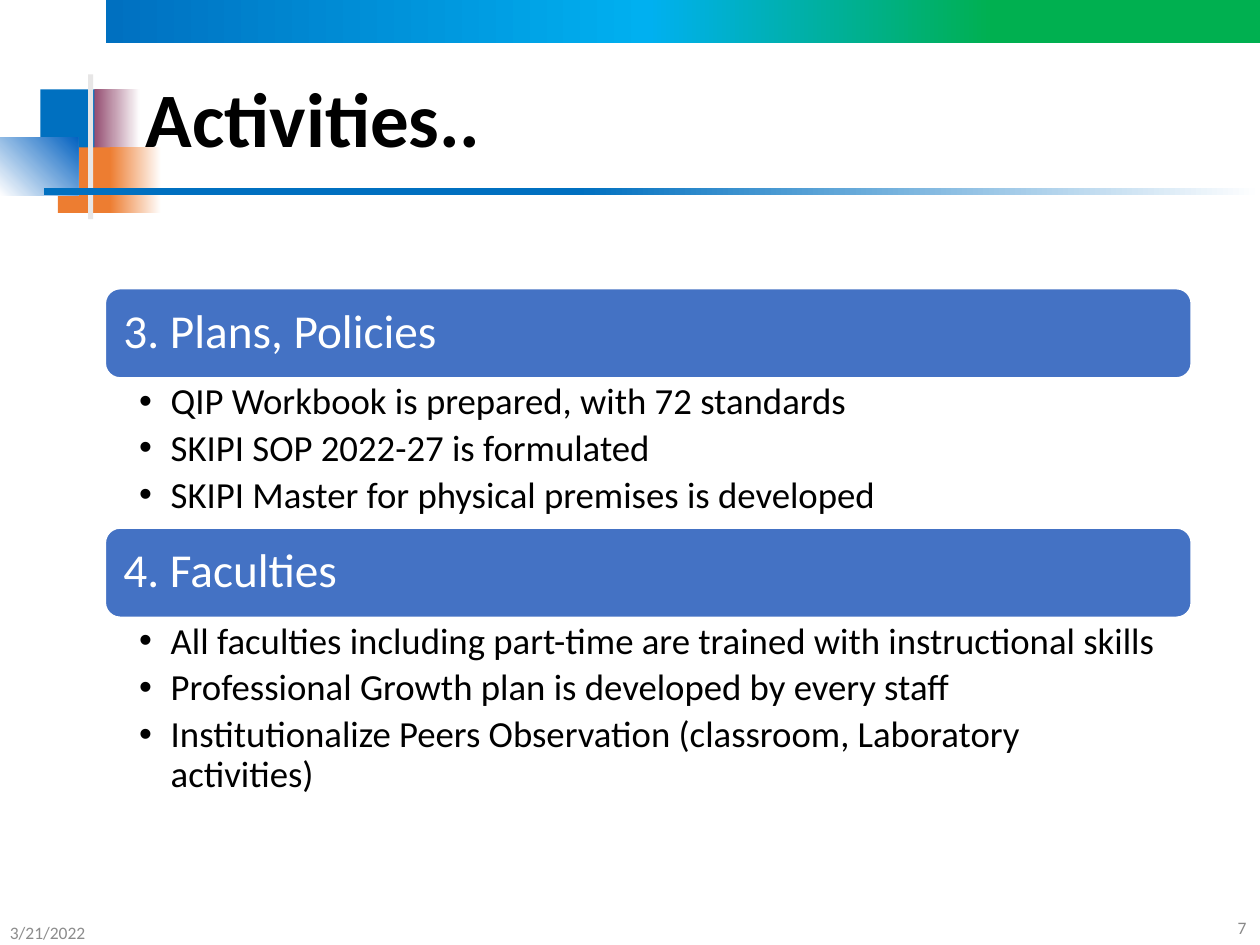
from lxml import etree
from pptx import Presentation
from pptx.dml.color import RGBColor
from pptx.enum.shapes import MSO_SHAPE
from pptx.enum.text import MSO_ANCHOR, PP_ALIGN
from pptx.oxml import parse_xml
from pptx.oxml.ns import nsdecls, qn
from pptx.util import Inches, Pt

RECTANGLE = MSO_SHAPE.RECTANGLE
ROUNDED = MSO_SHAPE.ROUNDED_RECTANGLE
MIDDLE, TOP = MSO_ANCHOR.MIDDLE, MSO_ANCHOR.TOP
LEFT, RIGHT = PP_ALIGN.LEFT, PP_ALIGN.RIGHT

BLACK = RGBColor(0x00, 0x00, 0x00)
WHITE = RGBColor(0xFF, 0xFF, 0xFF)
BLUE = RGBColor(0x00, 0x70, 0xC0)
SKY = RGBColor(0x00, 0xB0, 0xF0)
GREEN = RGBColor(0x00, 0xB0, 0x50)
PLUM = RGBColor(0x95, 0x4F, 0x72)
ORANGE = RGBColor(0xED, 0x7D, 0x31)
LINK_BLUE = RGBColor(0x05, 0x63, 0xC1)
PALE = RGBColor(0xE7, 0xE6, 0xE6)
HEADING_BLUE = RGBColor(0x44, 0x72, 0xC4)
DATE_GRAY = RGBColor(0x8C, 0x8C, 0x8C)
NUMBER_GRAY = RGBColor(0x89, 0x89, 0x89)

presentation = Presentation()
presentation.slide_width = Inches(10)
presentation.slide_height = Inches(7.5)
slide = presentation.slides.add_slide(presentation.slide_layouts[6])
COLUMN = presentation.slide_width / 100
ROW = presentation.slide_height / 75


def add_block(left, top, width, height, stops, angle=0, kind=RECTANGLE):
    shape = slide.shapes.add_shape(
        kind, int(left * COLUMN), int(top * ROW), int(width * COLUMN), int(height * ROW))
    shape.shadow.inherit = False
    shape.line.fill.background()
    if len(stops) == 1:
        shape.fill.solid()
        shape.fill.fore_color.rgb = stops[0][1]
        return shape
    shape.fill.gradient()
    gradient = shape._element.spPr.find(qn("a:gradFill"))
    for child in list(gradient):
        gradient.remove(child)
    stop_list = etree.SubElement(gradient, qn("a:gsLst"))
    for position, color in stops:
        stop = etree.SubElement(stop_list, qn("a:gs"), pos=str(position * 1000))
        etree.SubElement(stop, qn("a:srgbClr"), val=str(color))
    etree.SubElement(gradient, qn("a:lin"), ang=str(angle * 60000), scaled="0")
    return shape


def write_text(shape, lines, size, color, anchor=MIDDLE, align=LEFT,
               insets=(1, 0.5, 1, 0.5), spacing=0.9, after=0, bold=False, bullet=False):
    frame = shape.text_frame
    frame.word_wrap = True
    frame.vertical_anchor = anchor
    left, top, right, bottom = insets
    frame.margin_left, frame.margin_right = int(left * COLUMN), int(right * COLUMN)
    frame.margin_top, frame.margin_bottom = int(top * ROW), int(bottom * ROW)
    for index, line in enumerate(lines):
        paragraph = frame.paragraphs[0] if index == 0 else frame.add_paragraph()
        paragraph.alignment = align
        paragraph.line_spacing = spacing
        paragraph.space_after = Pt(after)
        if bullet:
            properties = paragraph._p.get_or_add_pPr()
            properties.set("marL", str(Inches(0.25)))
            properties.set("indent", str(-Inches(0.25)))
            properties.append(parse_xml(f'<a:buFont {nsdecls("a")} typeface="Arial"/>'))
            properties.append(parse_xml(f'<a:buChar {nsdecls("a")} char="•"/>'))
        run = paragraph.add_run()
        run.text = line
        run.font.name = "Calibri"
        run.font.size = Pt(size)
        run.font.bold = bold
        run.font.color.rgb = color


decorations = [
    (8.4, -0.1, 91.6, 3.5, [(0, BLUE), (47, SKY), (77, GREEN)], 0),
    (3.2, 7.1, 4.8, 5.2, [(0, BLUE)], 0),
    (7.5, 7.1, 3.6, 5.2, [(0, PLUM), (100, WHITE)], 0),
    (4.6, 11.7, 4.7, 5.2, [(0, ORANGE)], 0),
    (8.7, 11.7, 4.1, 5.2, [(0, ORANGE), (100, WHITE)], 0),
    (0, 10.9, 6.2, 4.6, [(0, WHITE), (100, LINK_BLUE)], 315),
    (7, 5.9, 0.4, 11.5, [(0, PALE)], 0),
    (3.5, 14.9, 96.5, 0.6, [(41, BLUE), (44, BLUE), (100, WHITE)], 0),
]
for decoration in decorations:
    add_block(*decoration)

title = slide.shapes.add_textbox(
    int(10.6 * COLUMN), int(2.5 * ROW), int(86.2 * COLUMN), int(14.5 * ROW))
write_text(title, ["Activities.."], 44, BLACK, bold=True)

SECTION_LEFT, SECTION_WIDTH, HEADING_HEIGHT = 8.35, 86.2, 7.1
sections = [
    ("3. Plans, Policies", 11.9, [
        "QIP Workbook is prepared, with 72 standards",
        "SKIPI SOP 2022-27 is formulated",
        "SKIPI Master for physical premises is developed"]),
    ("4. Faculties", 18.9, [
        "All faculties including part-time are trained with instructional skills",
        "Professional Growth plan is developed by every staff",
        "Institutionalize Peers Observation (classroom, Laboratory activities)"]),
]
section_top = 22.9
for heading, list_height, items in sections:
    band = add_block(SECTION_LEFT, section_top, SECTION_WIDTH, HEADING_HEIGHT,
                     [(0, HEADING_BLUE)], kind=ROUNDED)
    band.line.color.rgb = WHITE
    band.line.width = Pt(1)
    write_text(band, [heading], 27, WHITE, insets=(1.1, 1.1, 1.1, 1.1))
    section_top += HEADING_HEIGHT
    item_list = slide.shapes.add_textbox(
        int(SECTION_LEFT * COLUMN), int(section_top * ROW),
        int(SECTION_WIDTH * COLUMN), int(list_height * ROW))
    write_text(item_list, items, 21, BLACK, anchor=TOP, insets=(2.7, 0.4, 2.1, 0.4),
               after=4, bullet=True)
    section_top += list_height

footers = [
    ("3/21/2022", -0.2, 72, DATE_GRAY, LEFT),
    ("7", 77.4, 71.6, NUMBER_GRAY, RIGHT),
]
for words, left, top, color, align in footers:
    footer = slide.shapes.add_textbox(
        int(left * COLUMN), int(top * ROW), int(22.5 * COLUMN), int(4 * ROW))
    write_text(footer, [words], 10, color, align=align, spacing=1.0)

presentation.save("out.pptx")
